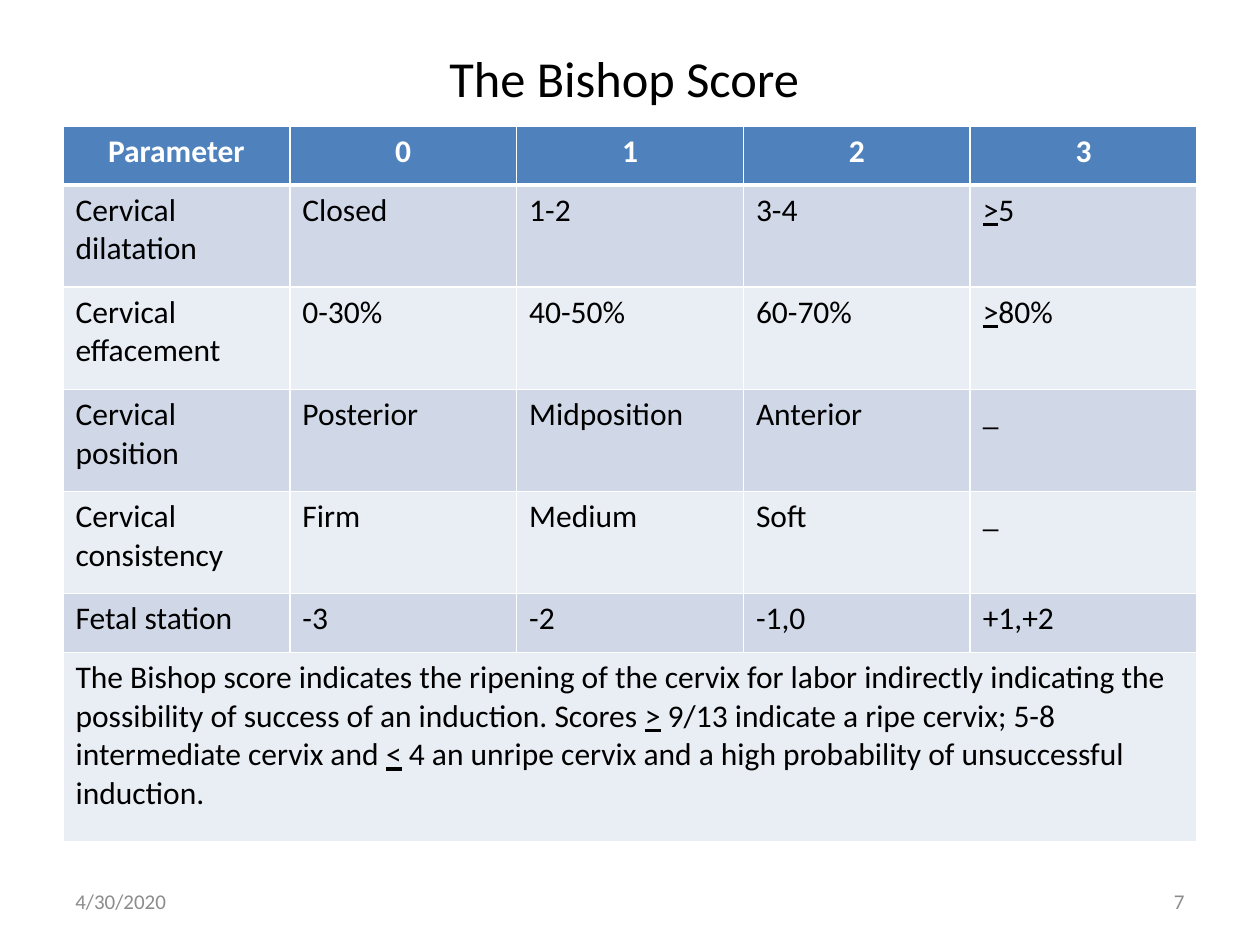
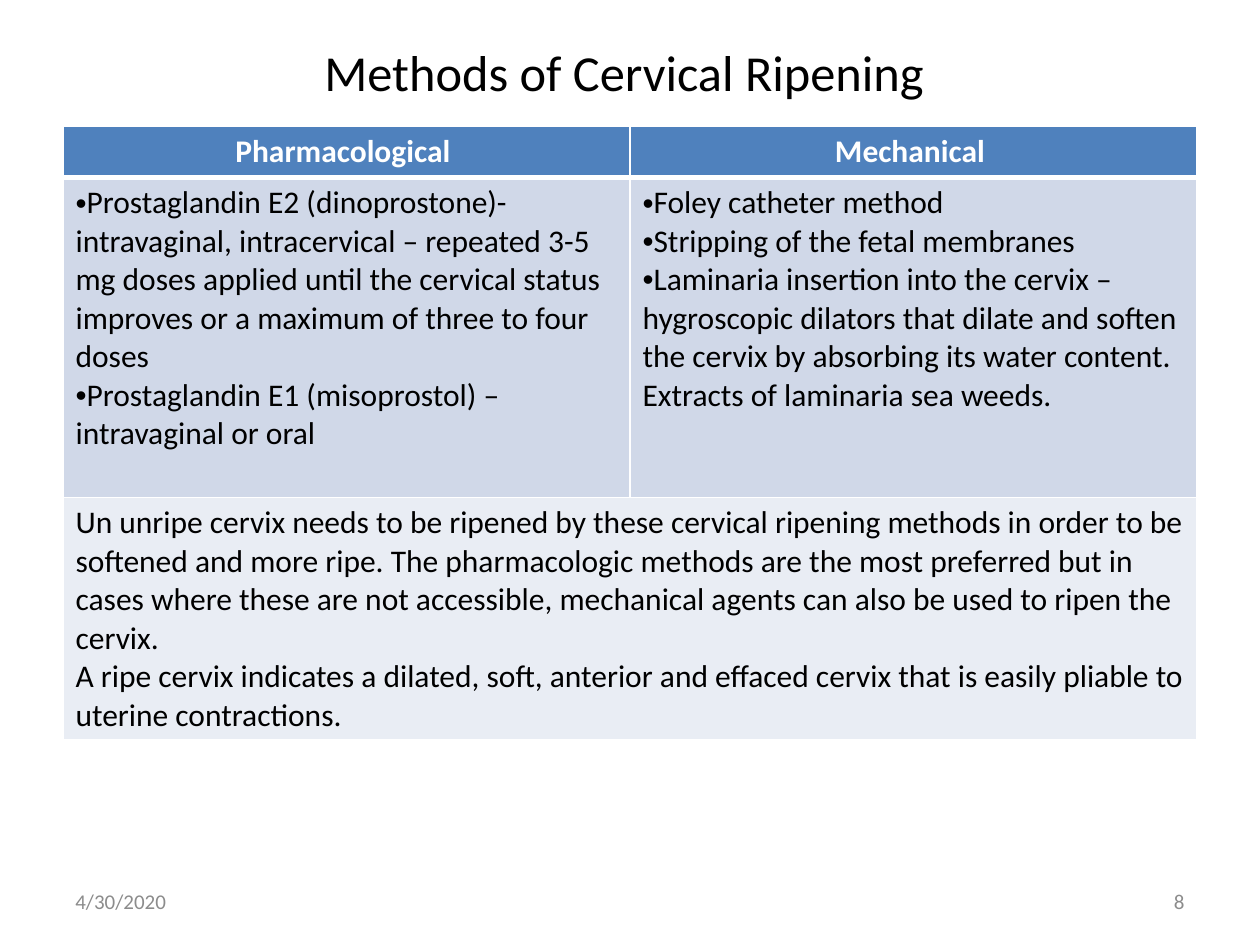
from dataclasses import dataclass

from lxml.etree import SubElement
from pptx import Presentation
from pptx.dml.color import RGBColor
from pptx.enum.text import MSO_ANCHOR as Anchor, PP_ALIGN as Align
from pptx.oxml.ns import qn
from pptx.util import Inches, Pt

FONT = "Calibri"
BLACK, WHITE, GRAY = "000000", "FFFFFF", "8C8C8C"
HEADER_FILL = "4F81BD"
BAND_FILLS = ("D0D8E8", "E9EDF4")
BULLET = "•"
UNDERLINE = "|"
LEFT, TABLE_TOP, CONTENT_WIDTH = 0.5, 1, 9
FOOTER_TOP, FOOTER_WIDTH, FOOTER_HEIGHT = 6.95, 2.33, 0.4
DATE = "4/30/2020"


@dataclass(frozen=True)
class TextStyle:
    """Look of a piece of text."""

    size: float
    color: str = BLACK
    bold: bool = False
    align: Align = Align.LEFT


@dataclass(frozen=True)
class TableSlide:
    """A titled table whose last row is a note across all columns."""

    number: int
    title: str
    title_height: float
    row_heights: tuple[float, ...]
    rows: tuple[tuple[str, ...], ...]
    note: str


TITLE = TextStyle(28.8, align=Align.CENTER)
HEADER = TextStyle(18, WHITE, True, Align.CENTER)
BODY = TextStyle(18)
FOOTER_DATE = TextStyle(12, GRAY)
FOOTER_NUMBER = TextStyle(12, GRAY, align=Align.RIGHT)

SLIDES = (
    TableSlide(
        7,
        "The Bishop Score ",
        0.62,
        (0.47, 0.81, 0.81, 0.81, 0.81, 0.47, 1.5),
        (
            ("Parameter", "0", "1", "2", "3"),
            ("Cervical dilatation", "Closed", "1-2", "3-4", "|>|5"),
            ("Cervical effacement", "0-30%", "40-50%", "60-70%", "|>|80%"),
            ("Cervical position", "Posterior", "Midposition", "Anterior", "_"),
            ("Cervical consistency", "Firm", "Medium", "Soft", "_"),
            ("Fetal station", "-3", "-2", "-1,0", "+1,+2"),
        ),
        "The Bishop score indicates the ripening of the cervix for labor indirectly "
        "indicating the possibility of success of an induction. Scores |>| 9/13 indicate "
        "a ripe cervix; 5-8 intermediate cervix and |<| 4 an unripe cervix and a high "
        "probability of unsuccessful induction.",
    ),
    TableSlide(
        8,
        "Methods of Cervical Ripening ",
        0.53,
        (0.41, 2.54, 1.92),
        (
            ("Pharmacological ", "Mechanical "),
            (
                "•Prostaglandin E2 (dinoprostone)- intravaginal, intracervical – repeated "
                "3-5 mg doses applied until the cervical status improves or a maximum of "
                "three to four doses\n"
                "•Prostaglandin E1 (misoprostol) – intravaginal or oral",
                "•Foley catheter method\n"
                "•Stripping of the fetal membranes\n"
                "•Laminaria insertion into the cervix – hygroscopic dilators that dilate "
                "and soften the cervix by absorbing its water content. Extracts of "
                "laminaria sea weeds.",
            ),
        ),
        "Un unripe cervix needs to be ripened by these cervical ripening methods in order "
        "to be softened and more ripe. The pharmacologic methods are the most preferred "
        "but in cases where these are not accessible, mechanical agents can also be used "
        "to ripen the cervix.\n"
        "A ripe cervix indicates a dilated, soft, anterior and effaced cervix that is "
        "easily pliable to uterine contractions.",
    ),
)


def rgb(color: str) -> RGBColor:
    """Turn a hex string into a colour."""
    return RGBColor.from_string(color)


def add_bullet(paragraph) -> None:
    """Give a paragraph a bullet without a hanging indent."""
    properties = paragraph._p.get_or_add_pPr()
    properties.set("marL", "0")
    properties.set("indent", "0")
    SubElement(properties, qn("a:buFont"), typeface="Arial")
    SubElement(properties, qn("a:buChar"), char=BULLET)


def write_text(text_frame, text: str, style: TextStyle) -> None:
    """Write lines as paragraphs, with bullets and underlined pieces."""
    for index, line in enumerate(text.split("\n")):
        paragraph = text_frame.add_paragraph() if index else text_frame.paragraphs[0]
        paragraph.alignment = style.align
        if line.startswith(BULLET):
            add_bullet(paragraph)
        for position, piece in enumerate(line.removeprefix(BULLET).split(UNDERLINE)):
            if not piece:
                continue
            run = paragraph.add_run()
            run.text = piece
            run.font.name = FONT
            run.font.size = Pt(style.size)
            run.font.bold = style.bold
            run.font.underline = position % 2 == 1
            run.font.color.rgb = rgb(style.color)


def add_text(slide, left: float, top: float, width: float, height: float,
             text: str, style: TextStyle) -> None:
    """Add a wrapping, vertically centred text box."""
    box = slide.shapes.add_textbox(Inches(left), Inches(top), Inches(width), Inches(height))
    box.text_frame.word_wrap = True
    box.text_frame.vertical_anchor = Anchor.MIDDLE
    write_text(box.text_frame, text, style)


def style_cell(cell, row: int) -> None:
    """Set the white borders and the banded fill of a cell."""
    properties = cell._tc.get_or_add_tcPr()
    widths = {"lnL": 1, "lnR": 1, "lnT": 3 if row == 1 else 1, "lnB": 3 if row == 0 else 1}
    for side, width in widths.items():
        line = SubElement(properties, qn(f"a:{side}"), w=str(Pt(width)))
        SubElement(SubElement(line, qn("a:solidFill")), qn("a:srgbClr"), val=WHITE)
    cell.fill.solid()
    cell.fill.fore_color.rgb = rgb(BAND_FILLS[(row - 1) % 2] if row else HEADER_FILL)


def add_score_table(slide, content: TableSlide) -> None:
    """Add the table with equal columns and the note row."""
    column_count = len(content.rows[0])
    table = slide.shapes.add_table(
        len(content.row_heights), column_count, Inches(LEFT), Inches(TABLE_TOP),
        Inches(CONTENT_WIDTH), Inches(sum(content.row_heights)),
    ).table
    table.horz_banding = False
    for row, height in enumerate(content.row_heights):
        table.rows[row].height = Inches(height)
        for column in range(column_count):
            style_cell(table.cell(row, column), row)
    for row, texts in enumerate(content.rows):
        for column, text in enumerate(texts):
            write_text(table.cell(row, column).text_frame, text, BODY if row else HEADER)
    note_row = len(content.rows)
    note = table.cell(note_row, 0)
    note.merge(table.cell(note_row, column_count - 1))
    write_text(note.text_frame, content.note, BODY)


def add_table_slide(presentation, content: TableSlide) -> None:
    """Add one slide with title, table and footer."""
    slide = presentation.slides.add_slide(presentation.slide_layouts[6])
    add_text(slide, LEFT, 0.3, CONTENT_WIDTH, content.title_height, content.title, TITLE)
    add_score_table(slide, content)
    number_left = LEFT + CONTENT_WIDTH - FOOTER_WIDTH
    for left, text, style in (
        (LEFT, DATE, FOOTER_DATE),
        (number_left, str(content.number), FOOTER_NUMBER),
    ):
        add_text(slide, left, FOOTER_TOP, FOOTER_WIDTH, FOOTER_HEIGHT, text, style)


def main() -> None:
    """Build and save the presentation."""
    presentation = Presentation()
    presentation.slide_width = Inches(10)
    presentation.slide_height = Inches(7.5)
    for content in SLIDES:
        add_table_slide(presentation, content)
    presentation.save("out.pptx")


if __name__ == "__main__":
    main()
